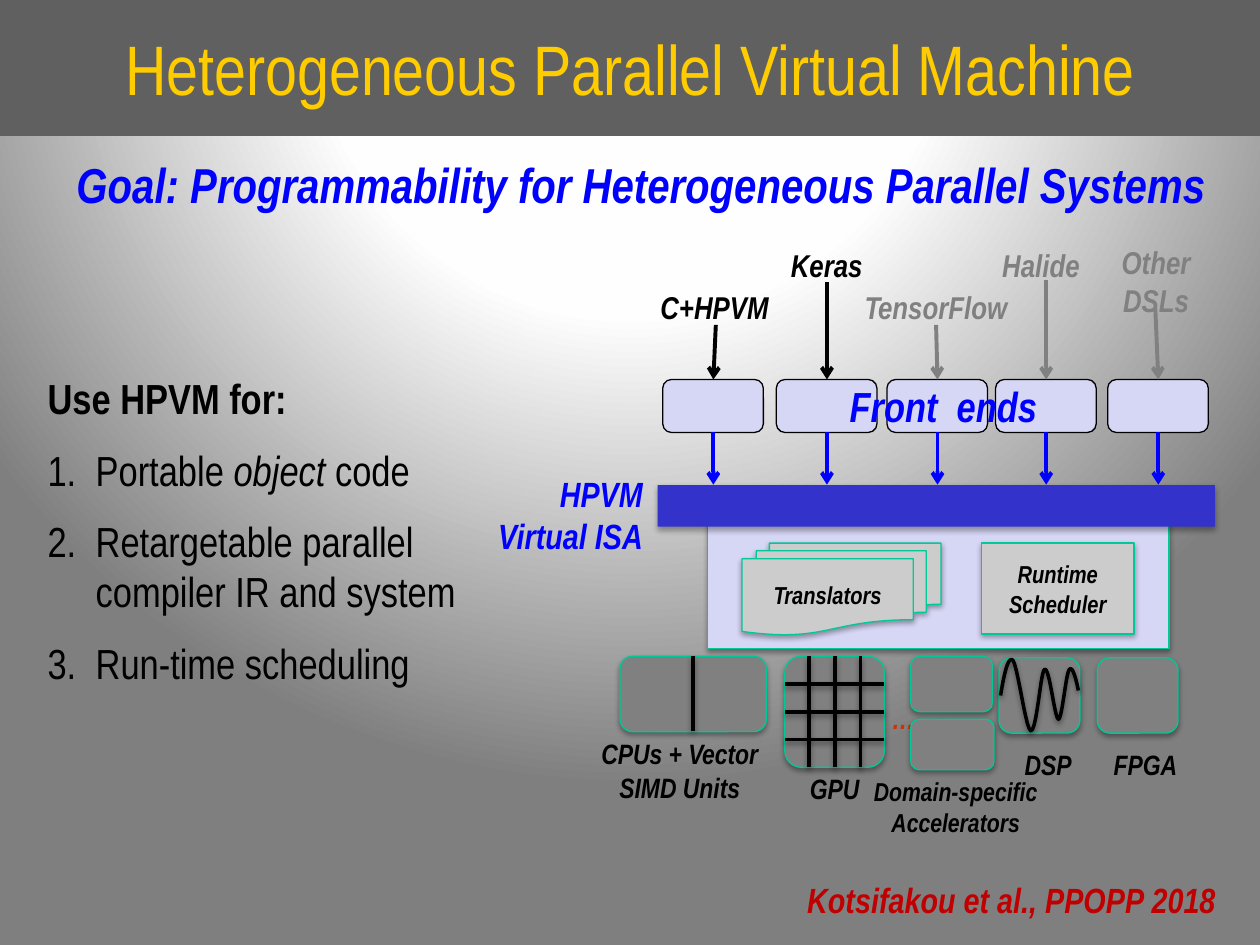
from lxml import etree
from pptx import Presentation
from pptx.dml.color import RGBColor
from pptx.enum.shapes import MSO_CONNECTOR, MSO_SHAPE
from pptx.enum.text import MSO_ANCHOR, PP_ALIGN
from pptx.oxml import parse_xml
from pptx.oxml.ns import nsdecls, qn
from pptx.util import Cm, Pt

RECT, ROUND = MSO_SHAPE.RECTANGLE, MSO_SHAPE.ROUNDED_RECTANGLE
DOCS = MSO_SHAPE.FLOWCHART_MULTIDOCUMENT
LEFT, CENTER, RIGHT = PP_ALIGN.LEFT, PP_ALIGN.CENTER, PP_ALIGN.RIGHT
FONT = "Arial Narrow"
BLACK, GRAY, BLUE = "000000", "808080", "0000FF"
LILAC, SILVER, GREEN = "D6D6F5", "CCCCCC", "00C896"
rgb = RGBColor.from_string


def write(sp, text, size, color, align=CENTER, bold=True, italic=True, wrap=True):
    tf = sp.text_frame
    tf.text = text
    tf.word_wrap = wrap
    for p in tf.paragraphs:
        p.alignment = align
        for r in p.runs:
            r.font.name, r.font.size = FONT, Pt(size)
            r.font.bold, r.font.italic = bold, italic
            r.font.color.rgb = rgb(color)


def add_box(kind, box, fill, line=None):
    sp = s.shapes.add_shape(kind, *map(Cm, box))
    sp.shadow.inherit = False
    sp.fill.solid()
    sp.fill.fore_color.rgb = rgb(fill)
    if line:
        sp.line.color.rgb = rgb(line)
        sp.line.width = Pt(0.75)
    else:
        sp.line.fill.background()
    sp.text_frame.vertical_anchor = MSO_ANCHOR.MIDDLE
    return sp


prs = Presentation()
prs.slide_width, prs.slide_height = Cm(25.4), Cm(19.05)
s = prs.slides.add_slide(prs.slide_layouts[6])

# Background: circular gradient centred above the slide
s.background.fill.solid()
bg = s.element.find(".//" + qn("p:bgPr"))
stops = "".join(
    f'<a:gs pos="{pos}"><a:srgbClr val="{color}"/></a:gs>'
    for pos, color in ((0, "FFFFFF"), (40000, "FEFEFE"), (100000, "7F7F7F")))
bg.replace(bg[0], parse_xml(
    f'<a:gradFill {nsdecls("a")} rotWithShape="1"><a:gsLst>{stops}</a:gsLst>'
    '<a:path path="circle"><a:fillToRect l="50000" t="-80000" r="50000" b="180000"/>'
    '</a:path></a:gradFill>'))

# Title and numbered list
title = add_box(RECT, (0, 0, 25.4, 2.74), "606060")
write(title, "Heterogeneous Parallel Virtual Machine", 40, "FFCC00", bold=False, italic=False)

body = s.shapes.add_textbox(Cm(0.71), Cm(7.39), Cm(9.04), Cm(7.39))
items = ["Use HPVM for:", "Portable ", "Retargetable parallel compiler IR and system",
         "Run-time scheduling"]
write(body, "\n".join(items), 24, BLACK, LEFT, bold=False, italic=False)
paragraphs = body.text_frame.paragraphs
paragraphs[0].runs[0].font.bold = True
for text, italic in (("object", True), (" code", False)):
    r = paragraphs[1].add_run()
    r.text = text
    r.font.name, r.font.size, r.font.italic = FONT, Pt(24), italic
    r.font.color.rgb = rgb(BLACK)
for i, p in enumerate(paragraphs):
    p.space_before = Pt(12)
    pPr = p._p.get_or_add_pPr()
    pPr.set("marL", str(Cm(0.97)))
    pPr.set("indent", str(-Cm(0.97)))
    if i:
        etree.SubElement(pPr, qn("a:buAutoNum"), type="arabicPeriod")

# Virtual ISA layer, translators and scheduler
shadowed = []
for kind, box, fill, line, text in (
    (RECT, (14.27, 10.41, 9.3, 2.67), LILAC, GREEN, ""),
    (DOCS, (14.96, 10.95, 4.01, 1.85), SILVER, GREEN, "Translators"),
    (RECT, (13.26, 9.78, 11.23, 0.84), "3333CC", None, ""),
    (RECT, (19.79, 10.95, 3.07, 1.83), SILVER, GREEN, "Runtime Scheduler"),
):
    sp = add_box(kind, box, fill, line)
    if text:
        write(sp, text, 14, BLACK)
    shadowed.append((sp, 35))

# Labels: text, box, size, colour, alignment, wrap
for text, box, size, color, align, wrap in (
    ("Goal: Programmability for Heterogeneous Parallel Systems",
     (1.18, 3, 23.47, 1.45), 28, BLUE, CENTER, False),
    ("HPVM\nVirtual ISA", (9.7, 9.4, 3.51, 2.49), 20, BLUE, RIGHT, True),
    ("C+HPVM", (12.83, 5.69, 3.15, 0.86), 18, BLACK, CENTER, False),
    ("Keras", (15.09, 4.83, 3.15, 0.86), 18, BLACK, CENTER, False),
    ("TensorFlow", (16.97, 5.69, 3.8, 0.86), 18, GRAY, CENTER, False),
    ("Halide", (19.41, 4.83, 3.15, 0.86), 18, GRAY, CENTER, False),
    ("Other\nDSLs", (22.1, 4.78, 2.41, 1.45), 18, GRAY, CENTER, False),
    ("CPUs + Vector SIMD Units", (11.48, 14.73, 4.45, 1.63), 16, BLACK, CENTER, True),
    ("…", (17.73, 14.02, 0.84, 1.12), 16, "CC3300", CENTER, True),
    ("GPU", (15.82, 15.42, 2.01, 0.94), 16, BLACK, CENTER, True),
    ("DSP", (20.19, 14.94, 1.88, 0.94), 16, BLACK, CENTER, True),
    ("Domain-specific Accelerators", (17.32, 15.52, 3.89, 1.55), 14.8, BLACK, CENTER, True),
    ("FPGA", (22.15, 14.94, 1.88, 0.94), 16, BLACK, CENTER, True),
    ("Kotsifakou et al., PPOPP 2018", (15.95, 17.58, 8.81, 1.12), 20, "C00000", RIGHT, False),
):
    write(s.shapes.add_textbox(*map(Cm, box)), text, size, color, align, wrap=wrap)

# Hardware: CPU, GPU, DSP, two accelerators, FPGA
for box in ((12.5, 13.23, 2.95, 1.52), (15.82, 13.23, 2.01, 2.24), (20.14, 13.26, 1.63, 1.52),
            (18.36, 13.23, 1.65, 1.12), (18.36, 14.5, 1.68, 1.02), (22.12, 13.26, 1.63, 1.52)):
    shadowed.append((add_box(ROUND, box, GRAY, GREEN), 35))

# Lines: start, end, colour, whether it is an arrow
lines = [(13.97, 13.23, 13.97, 14.73, BLACK, False)]
for i in range(3):
    x, y = 16.31 + 0.52 * i, 13.79 + 0.56 * i
    lines += [(x, 13.23, x, 15.47, BLACK, False), (15.82, y, 17.83, y, BLACK, False)]

# Front ends with an arrow in and an arrow out
for left, start_x, start_y, color in (
    (13.36, 14.43, 6.55, BLACK), (15.65, 16.67, 5.69, BLACK), (17.88, 18.87, 6.55, GRAY),
    (20.07, 21.09, 5.64, GRAY), (22.33, 23.29, 6.22, GRAY),
):
    add_box(ROUND, (left, 7.65, 2.03, 1.07), LILAC, BLACK)
    x = left + 1.02
    lines += [(start_x, start_y, x, 7.65, color, True), (x, 8.71, x, 9.77, BLUE, True)]

for *ends, color, arrow in lines:
    cn = s.shapes.add_connector(MSO_CONNECTOR.STRAIGHT, *map(Cm, ends))
    cn.line.color.rgb = rgb(color)
    cn.line.width = Pt(2.25 if arrow else 2)
    if arrow:
        etree.SubElement(cn.line._get_or_add_ln(), qn("a:tailEnd"), type="arrow")
    etree.SubElement(cn._element.spPr, qn("a:effectLst"))
    if not arrow:
        shadowed.append((cn, 38))

front = s.shapes.add_textbox(Cm(16.77), Cm(7.54), Cm(4.5), Cm(1.27))
write(front, "Front  ends", 24, BLUE, wrap=False)

# DSP waveform: Bezier segments sampled in ten steps each
wave = [(20.17, 14.02), (20.24, 13.61), (20.32, 13.21), (20.42, 13.31),
        (20.52, 13.44), (20.68, 14.71), (20.78, 14.73),
        (20.9, 14.76), (20.98, 13.51), (21.06, 13.49),
        (21.16, 13.44), (21.26, 14.5), (21.34, 14.5),
        (21.41, 14.5), (21.49, 13.56), (21.56, 13.49),
        (21.64, 13.39), (21.74, 13.92), (21.74, 13.92)]
points = []
for i in range(0, len(wave) - 1, 3):
    for t in (step / 10 for step in range(1, 11)):
        weights = ((1 - t) ** 3, 3 * t * (1 - t) ** 2, 3 * t * t * (1 - t), t ** 3)
        points.append([Cm(sum(w * v for w, v in zip(weights, axis)))
                       for axis in zip(*wave[i:i + 4])])
fb = s.shapes.build_freeform(*map(Cm, wave[0]))
fb.add_line_segments(points, close=False)
sp = fb.convert_to_shape()
sp.shadow.inherit = False
sp.fill.background()
sp.line.color.rgb = rgb(BLACK)
sp.line.width = Pt(2)
shadowed.append((sp, 38))

for sp, alpha in shadowed:
    sp._element.spPr.find(qn("a:effectLst")).append(parse_xml(
        f'<a:outerShdw {nsdecls("a")} blurRad="40000" dist="22000" dir="5400000" '
        f'rotWithShape="0"><a:srgbClr val="000000"><a:alpha val="{alpha}000"/>'
        '</a:srgbClr></a:outerShdw>'))

prs.save("out.pptx")
